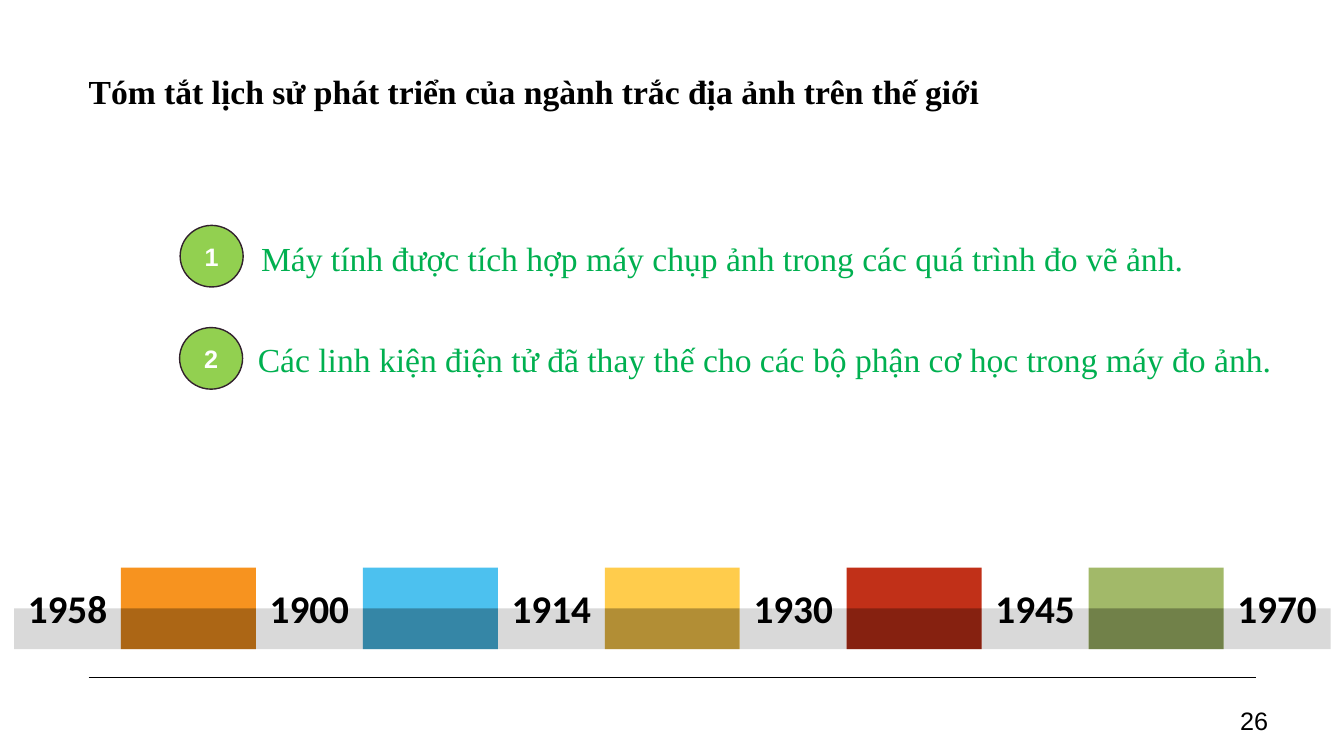
from dataclasses import dataclass

from lxml import etree
from pptx import Presentation
from pptx.dml.color import RGBColor
from pptx.enum.shapes import MSO_CONNECTOR, MSO_SHAPE
from pptx.enum.text import MSO_ANCHOR, PP_ALIGN
from pptx.oxml.ns import qn
from pptx.util import Pt

RECTANGLE, OVAL = MSO_SHAPE.RECTANGLE, MSO_SHAPE.OVAL
STRAIGHT = MSO_CONNECTOR.STRAIGHT
LEFT, CENTER, RIGHT, JUSTIFY = (
    PP_ALIGN.LEFT, PP_ALIGN.CENTER, PP_ALIGN.RIGHT, PP_ALIGN.JUSTIFY)
TOP, MIDDLE = MSO_ANCHOR.TOP, MSO_ANCHOR.MIDDLE


@dataclass(frozen=True)
class Theme:
    black: str = "000000"
    white: str = "FFFFFF"
    statement: str = "00B050"
    badge: str = "92D050"
    badge_edge: str = "32212D"
    serif: str = "Times New Roman"
    sans: str = "Arial"
    year_font: str = "Calibri"
    body_size: int = 24
    small_size: int = 18
    year_size: int = 28


THEME = Theme()

YEARS = ["1958", "1900", "1914", "1930", "1945", "1970"]
PERIOD_COLOURS = ["F7931F", "4CC1EF", "FFCC4C", "C13018", "A2B969"]
TIMELINE_LEFT, TIMELINE_TOP = 10, 405.5
YEAR_WIDTH, PERIOD_WIDTH = 76.4, 96.4
BLOCK_HEIGHT = 58.2


def write(shape, text, font, size, colour, bold=False, align=LEFT, anchor=TOP):
    frame = shape.text_frame
    frame.text = text
    frame.vertical_anchor = anchor
    para = frame.paragraphs[0]
    para.alignment = align
    span = para.runs[0].font
    span.name, span.size, span.bold = font, Pt(size), bold
    span.color.rgb = RGBColor.from_string(colour)


def add_text(page, left, top, width, height, text, font, size, colour,
             wrap=True, **style):
    box = page.shapes.add_textbox(Pt(left), Pt(top), Pt(width), Pt(height))
    box.text_frame.word_wrap = wrap
    write(box, text, font, size, colour, **style)
    return box


def add_filled(page, kind, left, top, width, height, colour, opacity=100):
    shape = page.shapes.add_shape(kind, Pt(left), Pt(top), Pt(width), Pt(height))
    shape.shadow.inherit = False
    shape.fill.solid()
    shape.fill.fore_color.rgb = RGBColor.from_string(colour)
    shape.line.fill.background()
    if opacity < 100:
        colour_node = shape.fill._xPr.find(".//" + qn("a:srgbClr"))
        etree.SubElement(colour_node, qn("a:alpha"), val=str(opacity * 1000))
    return shape


def add_rule(page, left, right, top):
    rule = page.shapes.add_connector(STRAIGHT, Pt(left), Pt(top), Pt(right), Pt(top))
    rule.line.width = Pt(1)
    rule.line.color.rgb = RGBColor.from_string(THEME.black)
    etree.SubElement(rule._element.spPr, qn("a:effectLst"))


def add_badge(page, left, top, number):
    badge = add_filled(page, OVAL, left, top, 45, 44, THEME.badge)
    badge.line.width = Pt(1)
    badge.line.color.rgb = RGBColor.from_string(THEME.badge_edge)
    write(badge, number, THEME.sans, THEME.small_size, THEME.white,
          bold=True, align=CENTER, anchor=MIDDLE)


def add_block(page, left, width, colour, shade):
    """Draw a timeline block whose lower half is darkened by shade percent."""
    half = BLOCK_HEIGHT / 2
    add_filled(page, RECTANGLE, left, TIMELINE_TOP, width, BLOCK_HEIGHT, colour)
    add_filled(page, RECTANGLE, left, TIMELINE_TOP + half, width, half,
               THEME.black, shade)


def add_timeline(page):
    pitch = YEAR_WIDTH + PERIOD_WIDTH
    for index, year in enumerate(YEARS):
        left = TIMELINE_LEFT + index * pitch
        add_block(page, left, YEAR_WIDTH, THEME.white, 15)
        add_text(page, left, 414, YEAR_WIDTH, 41, year, THEME.year_font,
                 THEME.year_size, THEME.black, wrap=False, bold=True,
                 align=CENTER, anchor=MIDDLE)
    for index, colour in enumerate(PERIOD_COLOURS):
        left = TIMELINE_LEFT + YEAR_WIDTH + index * pitch
        add_block(page, left, PERIOD_WIDTH, colour, 30)


def main():
    deck = Presentation()
    deck.slide_width, deck.slide_height = Pt(960), Pt(540)
    page = deck.slides.add_slide(deck.slide_layouts[6])

    add_rule(page, 63.4, 897.1, 483.8)
    add_text(page, 859.7, 500.4, 53.3, 28.8, "26", THEME.sans,
             THEME.small_size, THEME.black, align=RIGHT, anchor=MIDDLE)
    add_text(page, 56.2, 46.8, 793.4, 36,
             "Tóm tắt lịch sử phát triển của ngành trắc địa ảnh trên thế giới",
             THEME.serif, THEME.body_size, THEME.black, bold=True)

    statement = add_text(
        page, 186.5, 166.5, 672.5, 36,
        "Máy tính được tích hợp máy chụp ảnh trong các quá trình đo vẽ ảnh.",
        THEME.serif, THEME.body_size, THEME.statement, align=JUSTIFY)
    statement.text_frame.margin_left = statement.text_frame.margin_right = 0
    add_text(
        page, 177.1, 238.5, 748.8, 36,
        "Các linh kiện điện tử đã thay thế cho các bộ phận cơ học trong máy đo ảnh.",
        THEME.serif, THEME.body_size, THEME.statement)

    add_timeline(page)
    add_badge(page, 128.7, 161, "1")
    add_badge(page, 128.3, 234, "2")
    deck.save("out.pptx")


if __name__ == "__main__":
    main()
